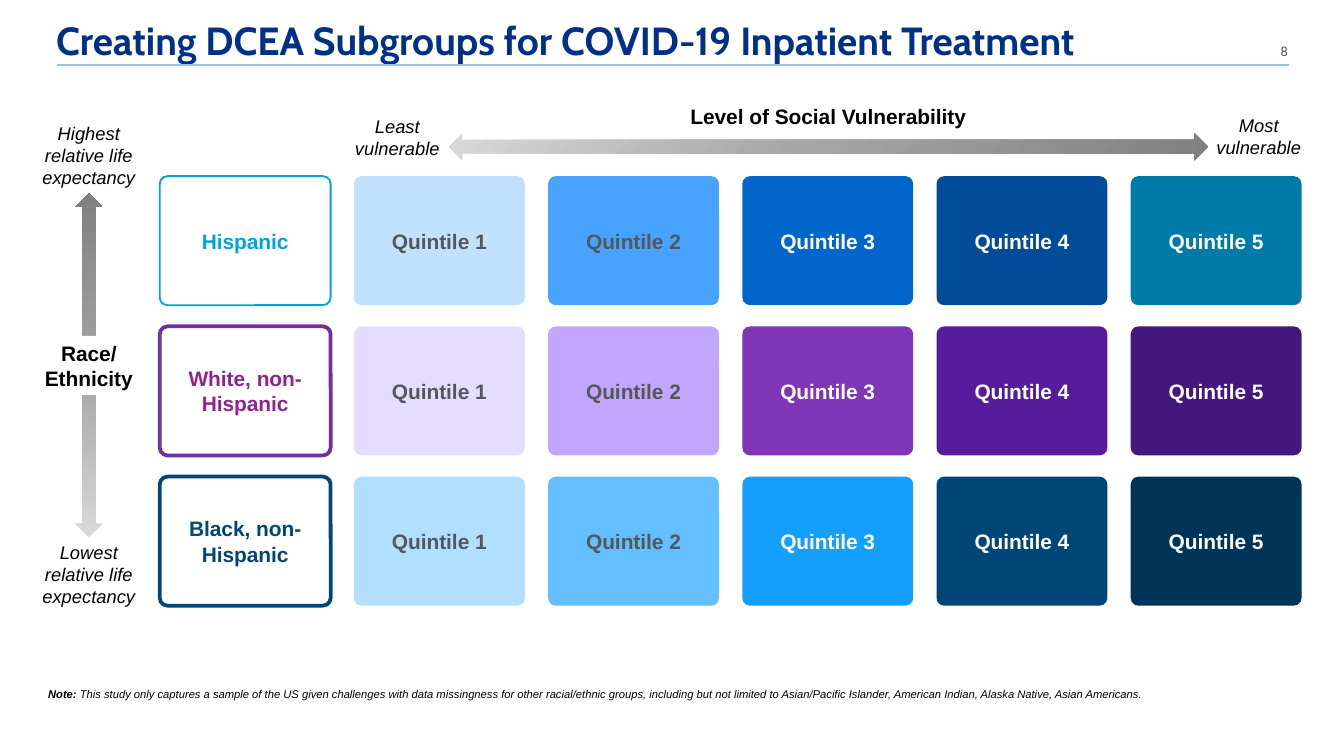
from copy import deepcopy
from dataclasses import dataclass

from pptx import Presentation
from pptx.dml.color import RGBColor
from pptx.enum.shapes import MSO_CONNECTOR, MSO_SHAPE
from pptx.enum.text import MSO_ANCHOR, MSO_AUTO_SIZE, PP_ALIGN
from pptx.oxml.ns import qn
from pptx.util import Cm, Pt


@dataclass(frozen=True)
class Theme:
    font: str = "Arial"
    head: str = "Cabin"
    num: str = "Roboto"
    navy: str = "003087"
    rule: str = "8DC8E8"
    gray: str = "545859"
    black: str = "000000"
    white: str = "FFFFFF"
    fade: tuple = ((0, "D9D9D9"), (0.46, "A6A6A6"), (1, "808080"))
    title: float = 21
    label: float = 11.2
    end: float = 9.8
    page: float = 7
    note: float = 6


T = Theme()

TITLE = "Creating DCEA Subgroups for COVID-19 Inpatient Treatment"
PAGE = "8"
# group, text colour, border colour, border width, quintile fills
GROUPS = [
    ("Hispanic", "00A3E0", "00A3E0", 1,
     ["C2E0FF", "47A3FF", "0066CC", "004C99", "007AA8"]),
    ("White, non-Hispanic", "942092", "7030A0", 2,
     ["E4DDFF", "C2A5FC", "7E35B6", "571B9E", "45167E"]),
    ("Black, non-Hispanic", "004677", "004677", 2,
     ["B1DFFF", "63BFFF", "149EFF", "004677", "003459"]),
]
# text, box (left, top, width, height in cm), wrap
ENDS = [
    ("Most vulnerable", (22.89, 2.16, 1.8, 0.84), True),
    ("Least\nvulnerable", (6.71, 2.18, 1.6, 0.84), False),
    ("Highest relative life expectancy", (0.62, 2.31, 2.12, 1.24), True),
    ("Lowest relative life expectancy", (0.62, 10.24, 2.12, 1.24), True),
]
ACROSS = "Level of Social Vulnerability"
DOWN = "Race/\nEthnicity"
NOTE = [
    ("Note: ", True),
    ("This study only captures a sample of the US given challenges with data "
     "missingness for other racial/ethnic groups, including but not limited to "
     "Asian/Pacific Islander, American Indian, Alaska Native, Asian Americans.",
     False),
]

# Grid in cm: column 0 holds the groups, columns 1-5 the quintiles
LEFT, TOP = 3.02, 3.33
STEP_X, STEP_Y = 3.67, 2.84
CELL_W, CELL_H = 3.23, 2.44


def rgb(code):
    return RGBColor.from_string(code)


def cms(box):
    return [Cm(n) for n in box]


def style(run, size, color, bold=False, italic=False, font=T.font):
    face = run.font
    face.name, face.size = font, Pt(size)
    face.bold, face.italic = bold, italic
    face.color.rgb = rgb(color)


def write(shape, text, size, color, align=PP_ALIGN.CENTER, pad=(0, 0),
          anchor=MSO_ANCHOR.TOP, wrap=True, **look):
    frame = shape.text_frame
    frame.text = text
    frame.word_wrap = wrap
    frame.auto_size = MSO_AUTO_SIZE.NONE
    frame.vertical_anchor = anchor
    frame.margin_left = frame.margin_right = Cm(pad[0])
    frame.margin_top = frame.margin_bottom = Cm(pad[1])
    for para in frame.paragraphs:
        para.alignment = align
        for run in para.runs:
            style(run, size, color, **look)


def add_form(slide, kind, box, fill=None, line=None, width=1):
    form = slide.shapes.add_shape(kind, *cms(box))
    form.shadow.inherit = False
    if fill:
        form.fill.solid()
        form.fill.fore_color.rgb = rgb(fill)
    else:
        form.fill.background()
    if line:
        form.line.color.rgb = rgb(line)
        form.line.width = Pt(width)
    else:
        form.line.fill.background()
    return form


def add_cell(slide, row, col, text, color, **look):
    box = (LEFT + col * STEP_X, TOP + row * STEP_Y, CELL_W, CELL_H)
    cell = add_form(slide, MSO_SHAPE.ROUNDED_RECTANGLE, box, **look)
    cell.adjustments[0] = 0.06
    write(cell, text, T.label, color, pad=(0.46, 0.13),
          anchor=MSO_ANCHOR.MIDDLE, bold=True)


def add_arrow(slide, box, angle, turn=0):
    """Double arrow with a three-stop gray gradient."""
    arrow = add_form(slide, MSO_SHAPE.LEFT_RIGHT_ARROW, box)
    arrow.rotation = turn
    arrow.fill.gradient()
    arrow.fill.gradient_angle = angle
    stops = arrow._element.spPr.find(qn("a:gradFill")).find(qn("a:gsLst"))
    stops.insert(1, deepcopy(stops[0]))
    for stop, (pos, color) in zip(arrow.fill.gradient_stops, T.fade):
        stop.position = pos
        stop.color.rgb = rgb(color)


def add_text(slide, box, text, size, color=T.black, **look):
    area = slide.shapes.add_textbox(*cms(box))
    write(area, text, size, color, **look)
    return area


def add_head(slide):
    title = slide.shapes.title
    title.left, title.top, title.width, title.height = cms((0.81, 0, 23.62, 1.6))
    write(title, TITLE, T.title, T.navy, PP_ALIGN.LEFT, (0.25, 0.13),
          MSO_ANCHOR.MIDDLE, bold=True, font=T.head)
    title.text_frame.paragraphs[0].line_spacing = 0.9

    rule = slide.shapes.add_connector(
        MSO_CONNECTOR.STRAIGHT, *cms((1.07, 1.23, 24.36, 1.23)))
    rule.line.color.rgb = rgb(T.rule)
    rule.line.width = Pt(1)
    props = rule._element.spPr
    props.append(props.makeelement(qn("a:effectLst"), {}))

    add_text(slide, (23.55, 0.69, 1.04, 0.46), PAGE, T.page, T.gray,
             align=PP_ALIGN.RIGHT, pad=(0.25, 0.13), font=T.num)


def add_grid(slide):
    for row, (name, ink, edge, width, fills) in enumerate(GROUPS):
        add_cell(slide, row, 0, name, ink, line=edge, width=width)
        for col, fill in enumerate(fills, 1):
            ink = T.gray if col < 3 else T.white
            add_cell(slide, row, col, f"Quintile {col}", ink, fill=fill)


def add_axes(slide):
    add_arrow(slide, (8.48, 2.52, 14.35, 0.51), angle=315)
    add_arrow(slide, (-1.57, 6.65, 6.5, 0.51), angle=180, turn=90)
    add_text(slide, (13, 1.96, 5.31, 0.48), ACROSS, T.label,
             wrap=False, bold=True)
    plate = add_form(slide, MSO_SHAPE.RECTANGLE, (0.83, 6.35, 1.7, 1.12), T.white)
    write(plate, DOWN, T.label, T.black, pad=(0, 0.08),
          anchor=MSO_ANCHOR.MIDDLE, wrap=False, bold=True)
    for text, box, wrap in ENDS:
        add_text(slide, box, text, T.end, wrap=wrap, italic=True)


def add_note(slide):
    area = add_text(slide, (0.66, 12.86, 24.08, 0.51), "", T.note,
                    align=PP_ALIGN.LEFT, pad=(0.25, 0.13),
                    anchor=MSO_ANCHOR.BOTTOM)
    for text, bold in NOTE:
        run = area.text_frame.paragraphs[0].add_run()
        run.text = text
        style(run, T.note, T.black, bold, italic=True)


def main():
    deck = Presentation()
    deck.slide_width, deck.slide_height = Cm(25.4), Cm(14.29)
    slide = deck.slides.add_slide(deck.slide_layouts[5])
    add_head(slide)
    add_grid(slide)
    add_axes(slide)
    add_note(slide)
    deck.save("out.pptx")


if __name__ == "__main__":
    main()
